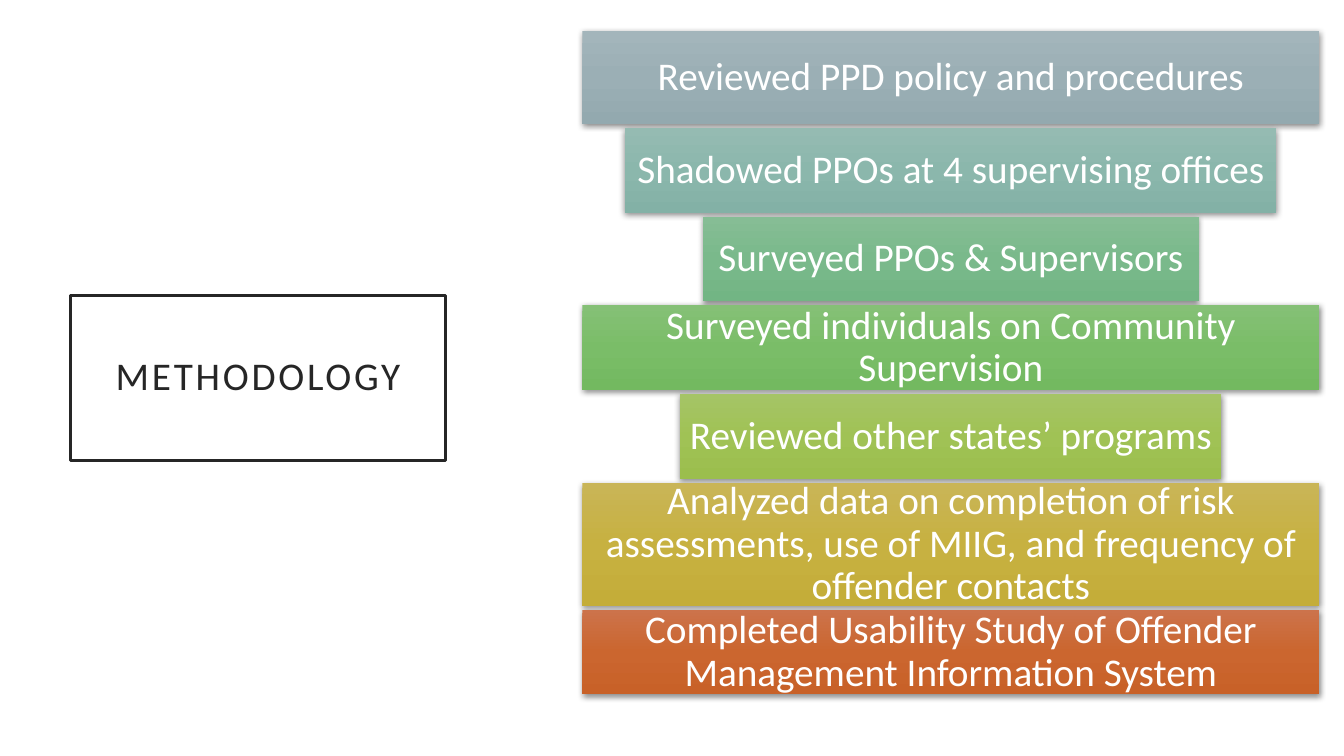
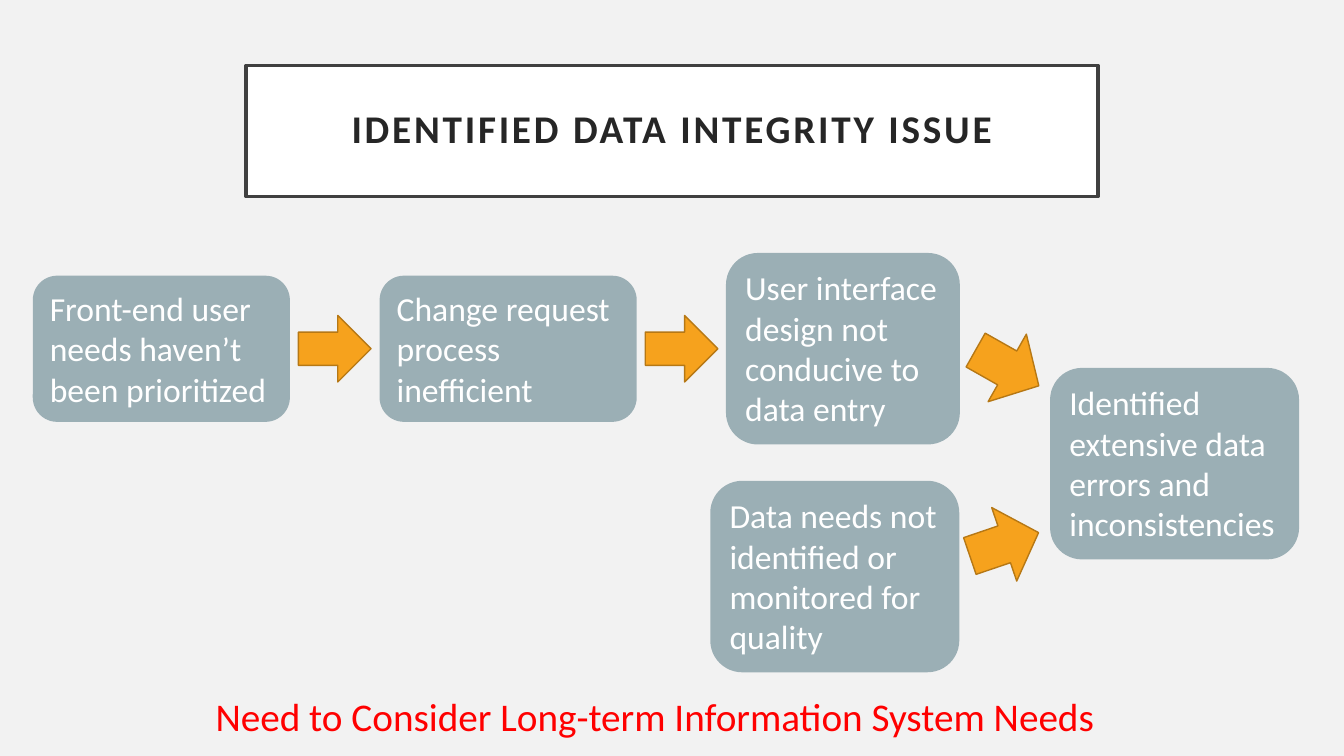
from lxml import etree
from pptx import Presentation
from pptx.dml.color import RGBColor
from pptx.enum.shapes import MSO_SHAPE
from pptx.enum.text import MSO_ANCHOR, MSO_AUTO_SIZE, PP_ALIGN
from pptx.oxml.ns import qn
from pptx.util import Inches, Pt

RECT, ROUND, ARROW = MSO_SHAPE.RECTANGLE, MSO_SHAPE.ROUNDED_RECTANGLE, MSO_SHAPE.RIGHT_ARROW
MIDDLE, TOP = MSO_ANCHOR.MIDDLE, MSO_ANCHOR.TOP
CENTER, LEFT = PP_ALIGN.CENTER, PP_ALIGN.LEFT
NO_FIT, FIT = MSO_AUTO_SIZE.NONE, MSO_AUTO_SIZE.SHAPE_TO_FIT_TEXT

FONT = "Calibri"
WHITE = RGBColor(0xFF, 0xFF, 0xFF)
PALE = RGBColor(0xF2, 0xF2, 0xF2)
INK = RGBColor(0x26, 0x26, 0x26)
FRAME = RGBColor(0x40, 0x40, 0x40)
RED = RGBColor(0xFF, 0x00, 0x00)
STEEL = RGBColor(0x9B, 0xAF, 0xB5)
ORANGE = RGBColor(0xF6, 0xA2, 0x1D)
BROWN = RGBColor(0xB6, 0x78, 0x15)

prs = Presentation()
prs.slide_width, prs.slide_height = Inches(13.33), Inches(7.5)


def add_centered(s, kind, cx, cy, w, h):
    """Add a plain shape around a centre point."""
    sp = s.shapes.add_shape(kind, Inches(cx - w / 2), Inches(cy - h / 2), Inches(w), Inches(h))
    sp.shadow.inherit = False
    sp.line.fill.background()
    return sp


def write(sp, text, size, color, align=LEFT, anchor=TOP, inset=None, spacing=None):
    tf = sp.text_frame
    tf.word_wrap = True
    tf.vertical_anchor = anchor
    if inset is not None:
        tf.margin_left = tf.margin_right = tf.margin_top = tf.margin_bottom = Inches(inset)
    p = tf.paragraphs[0]
    p.alignment = align
    if spacing:
        p.line_spacing = spacing
    r = p.add_run()
    r.text = text
    r.font.name, r.font.size = FONT, Pt(size)
    r.font.color.rgb = color
    return r


# Slides with their framed titles
slides = []
for text, box, background, frame, bold in [
    ("METHODOLOGY", (0.7, 2.93, 3.72, 1.64), WHITE, INK, False),
    ("IDENTIFIED DATA INTEGRITY ISSUE", (2.44, 0.65, 8.45, 1.3), PALE, FRAME, True),
]:
    s = prs.slides.add_slide(prs.slide_layouts[5])
    s.background.fill.solid()
    s.background.fill.fore_color.rgb = background
    title = s.shapes.title
    title.left, title.top, title.width, title.height = [Inches(v) for v in box]
    title.fill.solid()
    title.fill.fore_color.rgb = WHITE
    title.line.color.rgb = frame
    title.line.width = Pt(2.5)
    r = write(title, text, 28, INK, CENTER, MIDDLE, 0.2, 0.9)
    r.font.bold = bold
    r._r.get_or_add_rPr().set("spc", "200")
    title.text_frame.auto_size = NO_FIT
    slides.append(s)
methods, issue = slides

# Methodology: bands stacked on one centre line
BAND_CX, BAND_GAP, FULL, ROW = 9.43, 0.04, 7.31, 0.84
top = 0.31
for text, w, h, colors in [
    ("Reviewed PPD policy and procedures", FULL, 0.92, ("A3B5BB", "9BAFB5", "93A9AF")),
    ("Shadowed PPOs at 4 supervising offices", 6.46, ROW, ("95BBB2", "8BB7AC", "83B1A6")),
    ("Surveyed PPOs & Supervisors", 4.92, ROW, ("86BD95", "7AB98B", "72B584")),
    ("Surveyed individuals on Community Supervision", FULL, ROW, ("85C076", "7ABD68", "73B960")),
    ("Reviewed other states’ programs", 5.37, ROW, ("A5C466", "A0C255", "9BBE4D")),
    ("Analyzed data on completion of risk assessments, use of MIIG, and frequency of "
     "offender contacts", FULL, 1.22, ("C9B557", "C7B141", "C4AD39")),
    ("Completed Usability Study of Offender Management Information System", FULL, ROW,
     ("CC734B", "CB662F", "C86128")),
]:
    sp = add_centered(methods, RECT, BAND_CX, top + h / 2, w, h)
    write(sp, text, 28, WHITE, CENTER, MIDDLE, 0.08, 0.9)
    top += h + BAND_GAP

    # Three-stop gradient running down
    sp.fill.gradient()
    sp.fill.gradient_angle = 270
    spPr = sp._element.spPr
    stops = spPr.find(qn("a:gradFill")).find(qn("a:gsLst"))
    stops.clear()
    for pos, color in zip((0, 50000, 100000), colors):
        gs = etree.SubElement(stops, qn("a:gs"), pos=str(pos))
        etree.SubElement(gs, qn("a:srgbClr"), val=color)

    # Soft shadow below
    shadow = etree.SubElement(spPr.find(qn("a:effectLst")), qn("a:outerShdw"),
                              blurRad=str(Pt(4.4)), dist=str(Pt(1.2)), dir="5400000",
                              algn="ctr", rotWithShape="0")
    black = etree.SubElement(shadow, qn("a:srgbClr"), val="000000")
    etree.SubElement(black, qn("a:alpha"), val="45000")

# Data issue: cause boxes, the first three on one row
STEP, FLOW_Y = 3.44, 3.46
FIRST_X, ARROW_X = 1.6, 3.32
SHORT, TALL = 1.45, 1.9
for text, cx, cy, w, h in [
    ("Front-end user needs haven’t been prioritized", FIRST_X, FLOW_Y, 2.55, SHORT),
    ("Change request process inefficient", FIRST_X + STEP, FLOW_Y, 2.55, SHORT),
    ("User interface design not conducive to data entry", 8.36, FLOW_Y, 2.32, TALL),
    ("Data needs not identified or monitored for quality", 8.28, 5.72, 2.47, TALL),
    ("Identified extensive data errors and inconsistencies", 11.65, 4.6, 2.47, TALL),
]:
    sp = add_centered(issue, ROUND, cx, cy, w, h)
    sp.fill.solid()
    sp.fill.fore_color.rgb = STEEL
    write(sp, text, 24, WHITE)
    sp.text_frame.auto_size = FIT

# Arrows between the boxes
for cx, cy, h, angle in [
    (ARROW_X, FLOW_Y, 0.66, 0),
    (ARROW_X + STEP, FLOW_Y, 0.66, 0),
    (9.99, 3.65, 0.77, 29.5),
    (9.96, 5.4, 0.77, -18.8),
]:
    sp = add_centered(issue, ARROW, cx, cy, 0.72, h)
    sp.rotation = angle
    sp.fill.solid()
    sp.fill.fore_color.rgb = ORANGE
    sp.line.color.rgb = BROWN
    sp.line.width = Pt(1)

# Closing line
sp = issue.shapes.add_textbox(Inches(2.04), Inches(6.82), Inches(9.26), Inches(0.57))
write(sp, "Need to Consider Long-term Information System Needs", 28, RED)

prs.save("out.pptx")
